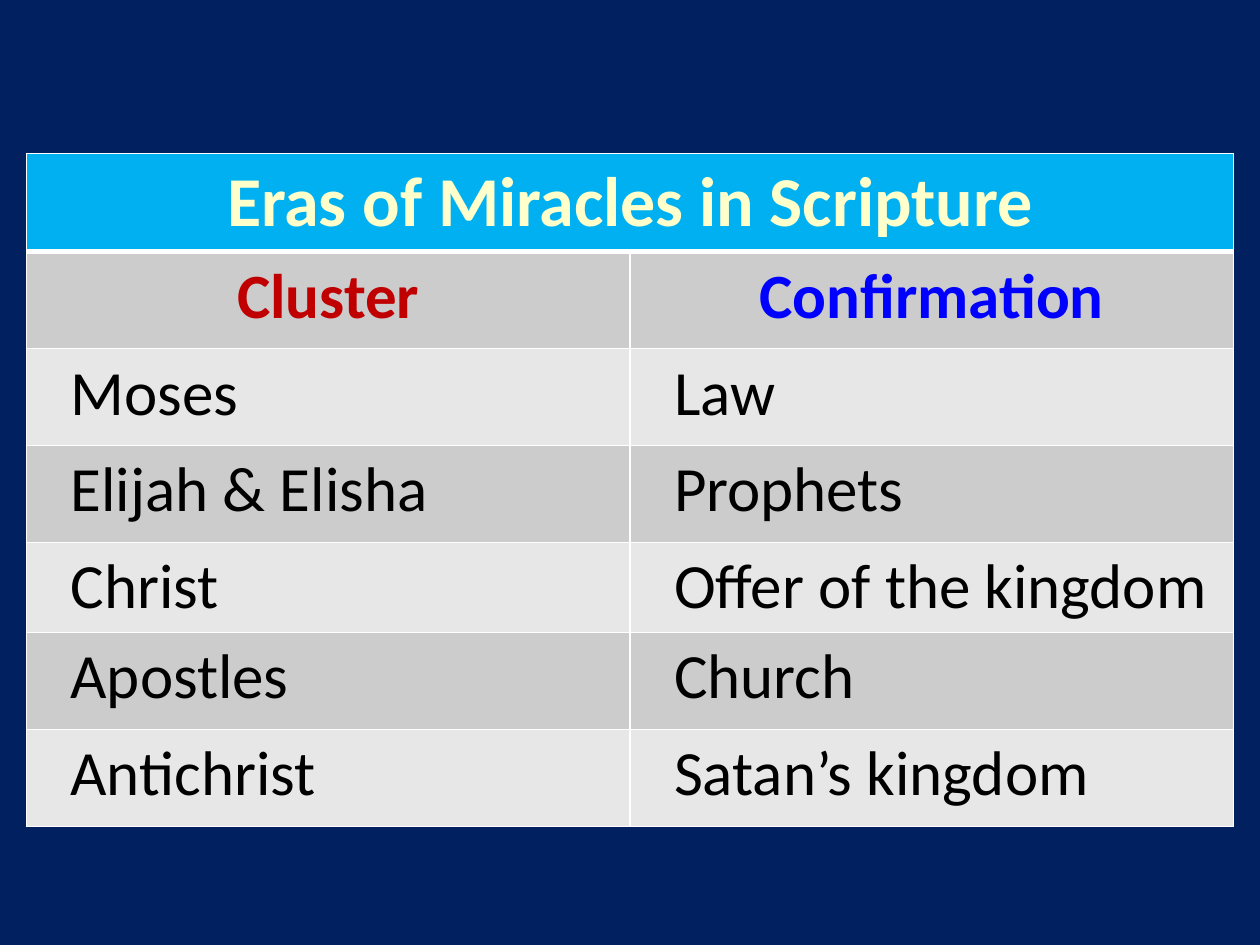
import pptx
import pptx.util
import pptx.dml.color
import pptx.enum.text
import pptx.oxml.ns
from lxml import etree

Inches, Pt = pptx.util.Inches, pptx.util.Pt
ALIGN = pptx.enum.text.PP_ALIGN

COLORS = {
    "background": "002060",
    "title_fill": "00B0F0",
    "title": "FFFFCC",
    "dark_band": "CCCCCC",
    "light_band": "E7E7E7",
    "cluster": "C00000",
    "confirmation": "0000FF",
    "body": "000000",
    "border": "FFFFFF",
}
TITLE = "Eras of Miracles in Scripture"
HEADINGS = [("Cluster", "cluster"), ("Confirmation", "confirmation")]
ERAS = [
    ("Moses", "Law"),
    ("Elijah & Elisha", "Prophets"),
    ("Christ", "Offer of the kingdom"),
    ("Apostles", "Church"),
    ("Antichrist", "Satan’s kingdom"),
]
ROW_HEIGHTS = [0.77, 0.77, 0.77, 0.77, 0.63, 0.77, 0.77]


def rgb(name):
    return pptx.dml.color.RGBColor.from_string(COLORS[name])


def write(tf, text, size=36, color="body", bold=False, align=ALIGN.LEFT, indent=0):
    p = tf.paragraphs[0]
    p.alignment = align
    if indent:
        pPr = p._p.get_or_add_pPr()
        pPr.set("marL", str(Inches(indent)))
        pPr.set("indent", "0")
    r = p.add_run()
    r.text = text
    r.font.name = "Calibri"
    r.font.size = Pt(size)
    r.font.bold = bold
    r.font.color.rgb = rgb(color)


def style_cell(cell, fill, top=1, bottom=1):
    # Borders come before the fill in the cell properties
    tcPr = cell._tc.get_or_add_tcPr()
    qn = pptx.oxml.ns.qn
    for side, width in (("L", 1), ("R", 1), ("T", top), ("B", bottom)):
        ln = etree.SubElement(tcPr, qn(f"a:ln{side}"), w=str(Pt(width)))
        solid = etree.SubElement(ln, qn("a:solidFill"))
        etree.SubElement(solid, qn("a:srgbClr"), val=COLORS["border"])
    cell.fill.solid()
    cell.fill.fore_color.rgb = rgb(fill)


def add_eras_table(slide, left, top, width, height):
    rows, cols = len(ROW_HEIGHTS), len(HEADINGS)
    table = slide.shapes.add_table(rows, cols, left, top, width, height).table
    for column in table.columns:
        column.width = int(width / cols)
    for row, row_height in zip(table.rows, ROW_HEIGHTS):
        row.height = Inches(row_height)

    # Title across both columns, with a heavier line below it
    for cell in table.rows[0].cells:
        style_cell(cell, "title_fill", bottom=3)
    table.cell(0, 0).merge(table.cell(0, cols - 1))
    write(table.cell(0, 0).text_frame, TITLE, size=40, color="title",
          bold=True, align=ALIGN.CENTER)

    # Column headings
    for col, (text, color) in enumerate(HEADINGS):
        cell = table.cell(1, col)
        style_cell(cell, "dark_band", top=3)
        write(cell.text_frame, text, color=color, bold=True, align=ALIGN.CENTER)

    # Banded body rows
    for row, era in enumerate(ERAS, start=2):
        for col, text in enumerate(era):
            cell = table.cell(row, col)
            style_cell(cell, "dark_band" if row % 2 else "light_band")
            write(cell.text_frame, text, indent=0.25)


def main():
    prs = pptx.Presentation()
    prs.slide_width, prs.slide_height = Inches(10), Inches(7.5)
    slide = prs.slides.add_slide(prs.slide_layouts[6])
    slide.background.fill.solid()
    slide.background.fill.fore_color.rgb = rgb("background")
    add_eras_table(slide, Inches(0.21), Inches(1.22), Inches(9.58), Inches(5.32))
    prs.save("out.pptx")


if __name__ == "__main__":
    main()
